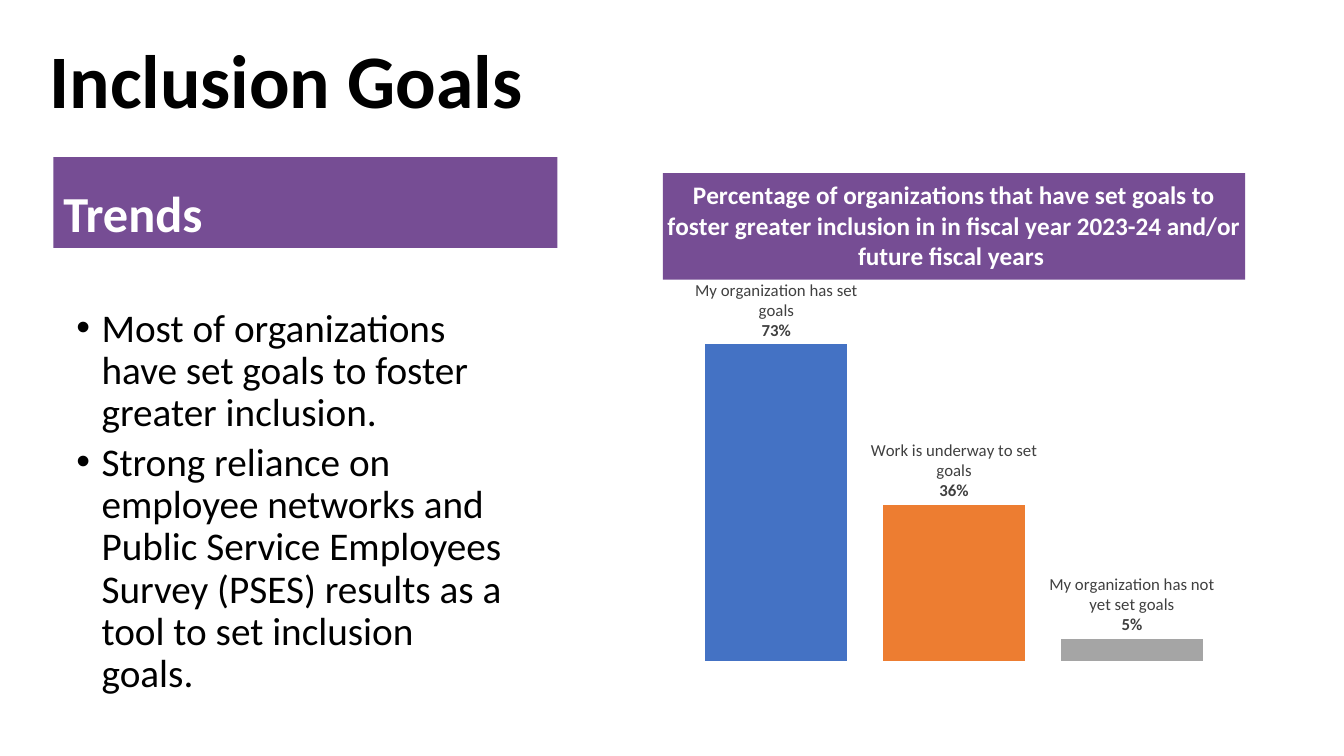
from lxml.etree import SubElement
from pptx import Presentation
from pptx.chart.data import CategoryChartData
from pptx.dml.color import RGBColor
from pptx.enum.chart import XL_CHART_TYPE as ChartType, XL_LABEL_POSITION as LabelPosition
from pptx.enum.shapes import MSO_SHAPE as Shape
from pptx.enum.text import MSO_ANCHOR as Anchor, MSO_AUTO_SIZE as AutoSize, PP_ALIGN as Align
from pptx.oxml import parse_xml
from pptx.oxml.ns import nsdecls, qn
from pptx.util import Pt

PX = 9144
PURPLE, WHITE, BLACK, GREY = "764D94", "FFFFFF", "000000", "404040"
BULLETS = [
    "Most of organizations have set goals to foster greater inclusion.",
    "Strong reliance on employee networks and Public Service Employees Survey (PSES) "
    "results as a tool to set inclusion goals.",
]
CHART_TITLE = ("Percentage of organizations that have set goals to foster greater inclusion "
               "in in fiscal year 2023-24 and/or future fiscal years ")
ANSWERS = [
    ("My organization has set goals", 0.73, "4472C4"),
    ("Work is underway to set goals", 0.36, "ED7D31"),
    ("My organization has not yet set goals", 0.05, "A5A5A5"),
]


def px(*lengths):
    return [length * PX for length in lengths]


def color(value):
    return RGBColor.from_string(value)


def style_font(font, size, fill, bold=False):
    font.name, font.size, font.bold = "Calibri", Pt(size), bold
    font.color.rgb = color(fill)


def write(frame, *lines, size, fill=BLACK, bold=(False,), align=Align.LEFT, spacing=None, before=None):
    for index, line in enumerate(lines):
        para = frame.paragraphs[0] if index == 0 else frame.add_paragraph()
        para.alignment, para.line_spacing = align, spacing
        if before is not None:
            para.space_before = Pt(before)
        span = para.add_run()
        span.text = line
        style_font(span.font, size, fill, bold[index % len(bold)])


def place(element, x, y, width=None, height=None, inner=False):
    old = element.find(qn("c:layout"))
    if old is not None:
        element.remove(old)
    layout = parse_xml(f"<c:layout {nsdecls('c')}/>")
    manual = SubElement(layout, qn("c:manualLayout"))
    settings = [("layoutTarget", "inner" if inner else None), ("xMode", "edge"),
                ("yMode", "edge"), ("x", x), ("y", y), ("w", width), ("h", height)]
    for name, value in settings:
        if value is not None:
            SubElement(manual, qn(f"c:{name}")).set("val", str(value))
    text = element.find(qn("c:tx"))
    if text is None:
        element.insert(0, layout)
    else:
        text.addnext(layout)


class GoalsSlide:
    def __init__(self, deck):
        self.page = deck.slides.add_slide(deck.slide_layouts[5])

    def set_frame(self, box, anchor):
        frame = box.text_frame
        frame.word_wrap, frame.auto_size, frame.vertical_anchor = True, AutoSize.NONE, anchor
        return frame

    def title(self, text, *area):
        box = self.page.shapes.title
        box.left, box.top, box.width, box.height = px(*area)
        write(self.set_frame(box, Anchor.MIDDLE), text, size=54, bold=(True,), spacing=0.9)

    def banner(self, text, *area):
        box = self.page.shapes.add_shape(Shape.RECTANGLE, *px(*area))
        box.shadow.inherit = False
        box.fill.solid()
        box.fill.fore_color.rgb = color(PURPLE)
        box.line.fill.background()
        write(self.set_frame(box, Anchor.BOTTOM), text, size=36, fill=WHITE, bold=(True,),
              spacing=0.9, before=10)

    def bullets(self, lines, *area):
        frame = self.set_frame(self.page.shapes.add_textbox(*px(*area)), Anchor.TOP)
        write(frame, *lines, size=28, spacing=0.9, before=5)
        for para in frame.paragraphs:
            properties = para._p.get_or_add_pPr()
            properties.set("marL", str(75 * PX))
            properties.set("indent", str(-25 * PX))
            SubElement(properties, qn("a:buFont")).set("typeface", "Arial")
            SubElement(properties, qn("a:buChar")).set("char", "•")

    def label(self, series, name, share):
        labels = series.data_labels
        labels.show_value = labels.show_series_name = True
        labels.number_format, labels.number_format_is_linked = "0%", False
        labels.position = LabelPosition.OUTSIDE_END
        style_font(labels.font, 12, GREY)
        label = series.points[0].data_label
        write(label.text_frame, name, f"{share:.0%}", size=12, fill=GREY,
              bold=(False, True), align=Align.CENTER)
        label.position = LabelPosition.OUTSIDE_END
        for flag in labels._element.iter(qn("c:showSerName")):
            flag.set("val", "1")

    def chart(self, heading, answers, *area):
        data = CategoryChartData(number_format="0%")
        data.categories = ["1"]
        for name, share, _ in answers:
            data.add_series(name, [share])
        chart = self.page.shapes.add_chart(ChartType.COLUMN_CLUSTERED, *px(*area), data).chart
        style_font(chart.font, 11, BLACK)
        chart.has_legend = False
        title = chart.chart_title
        write(title.text_frame, heading, size=18, fill=WHITE, bold=(True,), align=Align.CENTER)
        title.format.fill.solid()
        title.format.fill.fore_color.rgb = color(PURPLE)
        place(title._element, 0.11, 0.03)
        place(chart._chartSpace.chart.plotArea, 0.024, 0.298, 0.953, 0.659, inner=True)
        axis = chart.value_axis
        axis.minimum_scale, axis.maximum_scale = 0, 0.8
        axis.has_major_gridlines = False
        axis.tick_labels.number_format = "0%"
        axis.tick_labels.number_format_is_linked = False
        axis.visible = chart.category_axis.visible = False
        plot = chart.plots[0]
        plot.vary_by_categories, plot.gap_width, plot.overlap = False, 150, -25
        for series, (name, share, fill) in zip(plot.series, answers):
            series.format.fill.solid()
            series.format.fill.fore_color.rgb = color(fill)
            self.label(series, name, share)


def main():
    deck = Presentation()
    deck.slide_width, deck.slide_height = px(1333, 750)
    slide = GoalsSlide(deck)
    slide.title("Inclusion Goals", 39, 29, 1190, 108)
    slide.banner("Trends", 53, 156, 500, 90)
    slide.bullets(BULLETS, 16, 301, 500, 433)
    slide.chart(CHART_TITLE, ANSWERS, 576, 156, 740, 522)
    deck.save("out.pptx")


if __name__ == "__main__":
    main()
